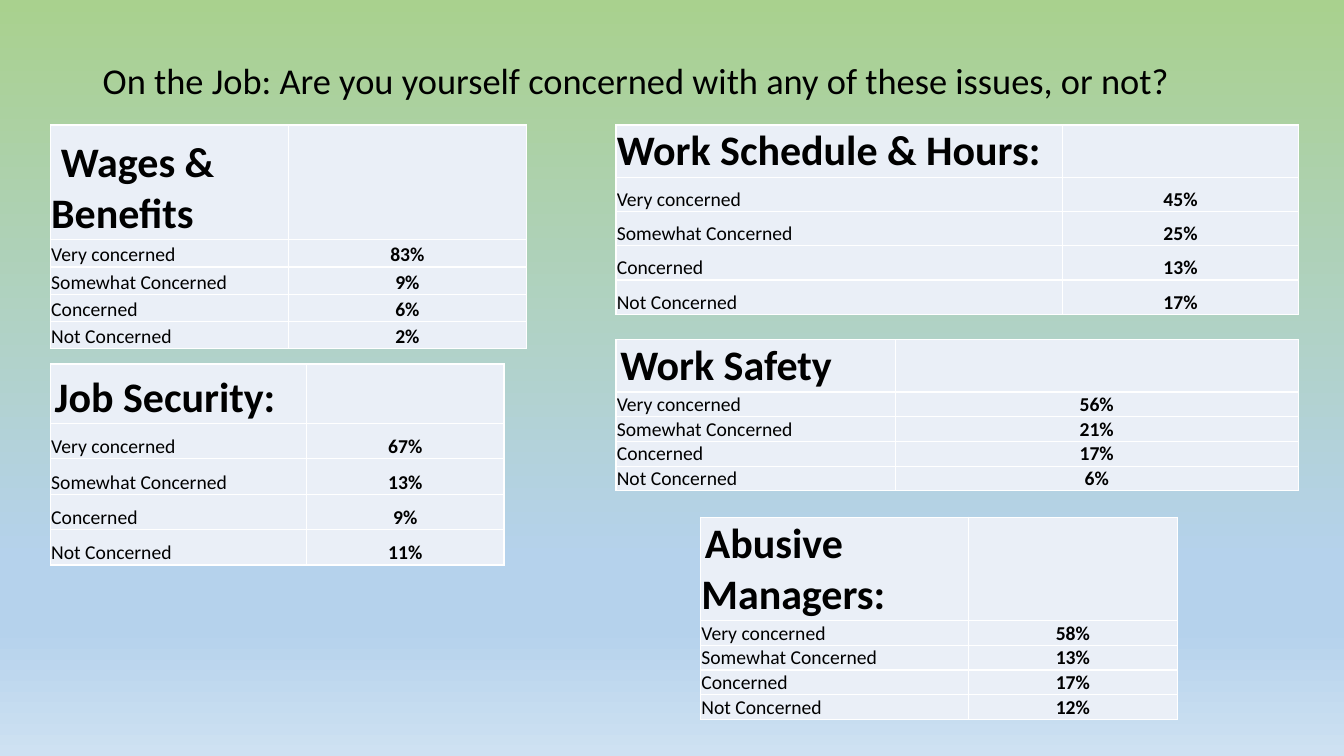
from copy import deepcopy

from lxml import etree
from pptx import Presentation
from pptx import util as u
from pptx.dml import color
from pptx.enum import text
from pptx.oxml import ns

FONT = "Calibri"
BLACK = "000000"
WHITE = "FFFFFF"
CELL_FILL = "EAEFF7"
BACKGROUND_STOPS = [(0, "A9D18E"), (0.74, "B5D2EC"), (0.83, "B5D2EC"), (1, "CEE1F2")]
ANSWERS = ["Very concerned", "Somewhat Concerned", "Concerned", "Not Concerned"]

# heading, first-line indent, (left, top), column widths, (heading, answer) heights, values
ISSUES = [
    ("Abusive Managers:", 2.5, (500.4, 369.4), (191.5, 149), (63.4, 15.1), (58, 13, 17, 12)),
    ("Work Safety", 2.5, (440, 242.6), (199.4, 288), (37.4, 17.3), (56, 21, 17, 6)),
    ("Work Schedule & Hours:", 0, (440, 89.3), (319, 168.5), (36.7, 24.5), (45, 25, 13, 17)),
    ("Wages & Benefits", 6.8, (36, 89.3), (170, 170), (82, 19.5), (83, 9, 6, 2)),
    ("Job Security:", 2.5, (36, 260), (183, 141), (42.5, 25.3), (67, 13, 9, 11)),
]


def rgb(value):
    return color.RGBColor.from_string(value)


def paint_background(slide):
    fill = slide.background.fill
    fill.gradient()
    fill.gradient_angle = 270
    stop_list = next(slide.element.iter(ns.qn("a:gsLst")))
    for stop in list(stop_list):
        stop_list.append(deepcopy(stop))
    for stop, (position, value) in zip(fill.gradient_stops, BACKGROUND_STOPS):
        stop.position = position
        stop.color.rgb = rgb(value)


def format_runs(paragraph, size, bold=False):
    for run in paragraph.runs:
        run.font.name = FONT
        run.font.size = u.Pt(size)
        run.font.bold = bold
        run.font.color.rgb = rgb(BLACK)


def add_title(slide, wording):
    title = slide.shapes.title
    title.left, title.top = u.Pt(66.2), u.Pt(28.8)
    title.width, title.height = u.Pt(828), u.Pt(60.5)
    frame = title.text_frame
    frame.text = wording
    frame.auto_size = text.MSO_AUTO_SIZE.NONE
    frame.vertical_anchor = text.MSO_ANCHOR.MIDDLE
    paragraph = frame.paragraphs[0]
    paragraph.alignment = text.PP_ALIGN.LEFT
    paragraph.line_spacing = 0.9
    format_runs(paragraph, 26)


def add_borders(cell):
    properties = cell._tc.get_or_add_tcPr()
    for side in ("lnL", "lnR", "lnT", "lnB"):
        line = etree.SubElement(properties, ns.qn(f"a:{side}"), w=str(u.Pt(1)))
        fill = etree.SubElement(line, ns.qn("a:solidFill"))
        etree.SubElement(fill, ns.qn("a:srgbClr"), val=WHITE)


def style_cell(cell):
    add_borders(cell)
    cell.fill.solid()
    cell.fill.fore_color.rgb = rgb(CELL_FILL)
    cell.vertical_anchor = text.MSO_ANCHOR.BOTTOM
    cell.margin_left = cell.margin_right = cell.margin_top = u.Pt(0.6)
    cell.margin_bottom = u.Pt(0)


def write_cell(cell, wording, size, bold=False, alignment=text.PP_ALIGN.LEFT):
    paragraph = cell.text_frame.paragraphs[0]
    paragraph.text = wording
    paragraph.alignment = alignment
    format_runs(paragraph, size, bold)
    return paragraph


def add_issue_table(slide, heading, indent, corner, widths, heights, values):
    left, top = corner
    heading_height, answer_height = heights
    total_height = heading_height + len(ANSWERS) * answer_height
    table = slide.shapes.add_table(
        len(ANSWERS) + 1, 2, u.Pt(left), u.Pt(top), u.Pt(sum(widths)), u.Pt(total_height)
    ).table
    table.first_row = table.horz_banding = False
    for column, width in zip(table.columns, widths):
        column.width = u.Pt(width)
    for index, row in enumerate(table.rows):
        row.height = u.Pt(answer_height if index else heading_height)
    for cell in table.iter_cells():
        style_cell(cell)

    paragraph = write_cell(table.cell(0, 0), heading, 30, True)
    paragraph._p.get_or_add_pPr().set("indent", str(u.Pt(indent)))
    for row, (answer, value) in enumerate(zip(ANSWERS, values), start=1):
        write_cell(table.cell(row, 0), answer, 14)
        write_cell(table.cell(row, 1), f"{value}%", 14, True, text.PP_ALIGN.CENTER)


def main():
    presentation = Presentation()
    presentation.slide_width, presentation.slide_height = u.Pt(960), u.Pt(540)
    slide = presentation.slides.add_slide(presentation.slide_layouts.get_by_name("Title Only"))
    paint_background(slide)
    add_title(slide, "On the Job: Are you yourself concerned with any of these issues, or not?")
    for issue in ISSUES:
        add_issue_table(slide, *issue)
    presentation.save("out.pptx")


if __name__ == "__main__":
    main()
